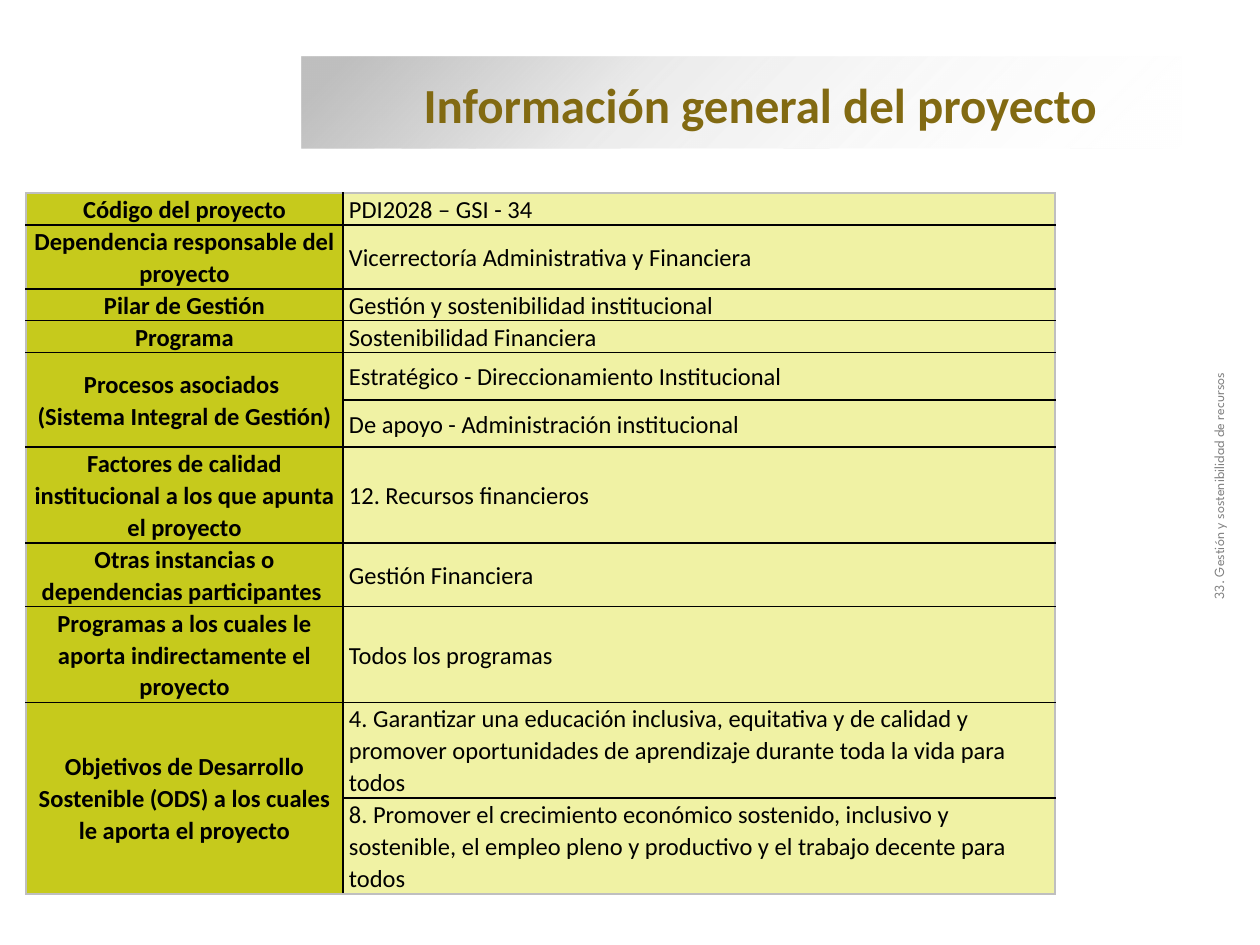
"""Build the general project information slide."""
import pptx
import pptx.dml.color
import pptx.enum.shapes
import pptx.enum.text
import pptx.oxml
import pptx.oxml.ns
import pptx.util

COLORS = {
    "title": "826A12", "label": "C6CA1C", "value": "F0F2A4", "text": "000000",
    "frame": "BFBFBF", "note": "808080", "white": "FFFFFF",
}
NAMESPACE = pptx.oxml.ns.nsdecls("a")
ALIGN = pptx.enum.text.PP_ALIGN
MIDDLE = pptx.enum.text.MSO_ANCHOR.MIDDLE
HALF_LINE = 15.75

SECTIONS = [
    ("Código del proyecto", [("PDI2028 – GSI - 34", 2)]),
    ("Dependencia responsable del proyecto",
     [("Vicerrectoría Administrativa y Financiera", 4)]),
    ("Pilar de Gestión", [("Gestión y sostenibilidad institucional", 2)]),
    ("Programa", [("Sostenibilidad Financiera", 2)]),
    ("Procesos asociados \v(Sistema Integral de Gestión)",
     [("Estratégico - Direccionamiento Institucional", 3),
      ("De apoyo - Administración institucional", 3)]),
    ("Factores de calidad institucional a los que apunta el proyecto",
     [("12. Recursos financieros", 6)]),
    ("Otras instancias o dependencias participantes ", [("Gestión Financiera", 4)]),
    ("Programas a los cuales le aporta indirectamente el proyecto",
     [("Todos los programas", 6)]),
    ("Objetivos de Desarrollo Sostenible (ODS) a los cuales le aporta el proyecto",
     [("4. Garantizar una educación inclusiva, equitativa y de calidad y promover "
       "oportunidades de aprendizaje durante toda la vida para todos", 6),
      ("8. Promover el crecimiento económico sostenido, inclusivo y sostenible, el "
       "empleo pleno y productivo y el trabajo decente para todos", 6)]),
]


def px(length):
    """Turn pixels into EMU."""
    return pptx.util.Emu(round(length * 914400 / 126))


def rgb(name):
    """Look up a named colour."""
    return pptx.dml.color.RGBColor.from_string(COLORS[name])


class SlideBuilder:
    """Hold the style and the current slide."""

    def __init__(self, deck, font="Calibri"):
        self.font = font
        self.slide = deck.slides.add_slide(deck.slide_layouts[5])

    def set_text(self, frame, text, size, color="text", bold=False,
                 align=ALIGN.LEFT, font=None, spacing=1.0):
        """Fill a text frame with one formatted paragraph."""
        frame.text = text
        frame.word_wrap = True
        para = frame.paragraphs[0]
        para.alignment = align
        para.line_spacing = spacing
        for span in para.runs:
            span.font.name = font or self.font
            span.font.size = pptx.util.Pt(size)
            span.font.bold = bold
            span.font.color.rgb = rgb(color)

    def band(self, left, top, width, height, stops, angle):
        """Add a borderless rectangle with a fading gradient."""
        box = self.slide.shapes.add_shape(
            pptx.enum.shapes.MSO_SHAPE.RECTANGLE,
            px(left), px(top), px(width), px(height))
        box.shadow.inherit = False
        box.line.fill.background()
        box.fill.gradient()
        gradient = box.element.spPr.find(pptx.oxml.ns.qn("a:gradFill"))
        marks = "".join(
            f'<a:gs pos="{place * 1000}"><a:srgbClr val="{COLORS[color]}">'
            f'<a:alpha val="{alpha * 1000}"/></a:srgbClr></a:gs>'
            for place, color, alpha in stops)
        gradient.getparent().replace(gradient, pptx.oxml.parse_xml(
            f'<a:gradFill {NAMESPACE} rotWithShape="1"><a:gsLst>{marks}</a:gsLst>'
            f'<a:lin ang="{angle * 60000}" scaled="0"/></a:gradFill>'))

    def title(self, left, top, width, height, text):
        """Place and format the title placeholder."""
        box = self.slide.shapes.title
        box.left, box.top, box.width, box.height = map(px, (left, top, width, height))
        self.set_text(box.text_frame, text, 28, "title", bold=True)
        box.text_frame.vertical_anchor = MIDDLE
        tree = box.element.getparent()
        tree.remove(box.element)
        tree.append(box.element)

    def label(self, left, top, width, height, text, rotation):
        """Add a small rotated text box."""
        box = self.slide.shapes.add_textbox(px(left), px(top), px(width), px(height))
        box.rotation = rotation
        self.set_text(box.text_frame, text, 8, "note", align=ALIGN.CENTER,
                      font="League Spartan")

    def cell(self, cell, text, fill, margin, edges, **style):
        """Format one table cell with its borders."""
        properties = cell._tc.get_or_add_tcPr()
        for side, color in zip("LRTB", edges):
            properties.append(pptx.oxml.parse_xml(
                f'<a:ln{side} {NAMESPACE} w="12700"><a:solidFill>'
                f'<a:srgbClr val="{COLORS[color]}"/></a:solidFill></a:ln{side}>'))
        cell.fill.solid()
        cell.fill.fore_color.rgb = rgb(fill)
        cell.margin_left = cell.margin_right = px(margin)
        cell.margin_top = cell.margin_bottom = 0
        cell.vertical_anchor = MIDDLE
        if text:
            self.set_text(cell.text_frame, text, 14, spacing=1.07, **style)

    def table(self, left, top, widths, sections):
        """Add a two-column table with one label per group of values."""
        rows = [(label if index == 0 else "", value, halves, len(values))
                for label, values in sections
                for index, (value, halves) in enumerate(values)]
        height = HALF_LINE * sum(row[2] for row in rows)
        table = self.slide.shapes.add_table(
            len(rows), 2, px(left), px(top), px(sum(widths)), px(height)).table
        table.first_row = table.horz_banding = False
        for column, width in zip(table.columns, widths):
            column.width = px(width)
        for index, (label, value, halves, group) in enumerate(rows):
            table.rows[index].height = px(HALF_LINE * halves)
            upper = "frame" if index == 0 else "text"
            lower = "frame" if index == len(rows) - 1 else "text"
            first, second = table.cell(index, 0), table.cell(index, 1)
            self.cell(second, value, "value", 6, ("text", "frame", upper, lower))
            if label and group > 1:
                first.merge(table.cell(index + group - 1, 0))
                lower = "frame" if index + group == len(rows) else "text"
            self.cell(first, label, "label", 5, ("frame", "text", upper, lower),
                      bold=True, align=ALIGN.CENTER)


def main():
    """Build and save the deck."""
    deck = pptx.Presentation()
    deck.slide_width, deck.slide_height = px(1260), px(945)
    page = SlideBuilder(deck)
    page.band(302, 57, 880, 91,
              [(5, "frame", 100), (37, "frame", 31), (100, "white", 0)], 45)
    page.title(411, 68, 781, 72, "Información general del proyecto")
    page.table(26, 193, (317, 712), SECTIONS)
    page.label(914, 471, 610, 30, "33. Gestión y sostenibilidad de recursos", 270)
    deck.save("out.pptx")


if __name__ == "__main__":
    main()
